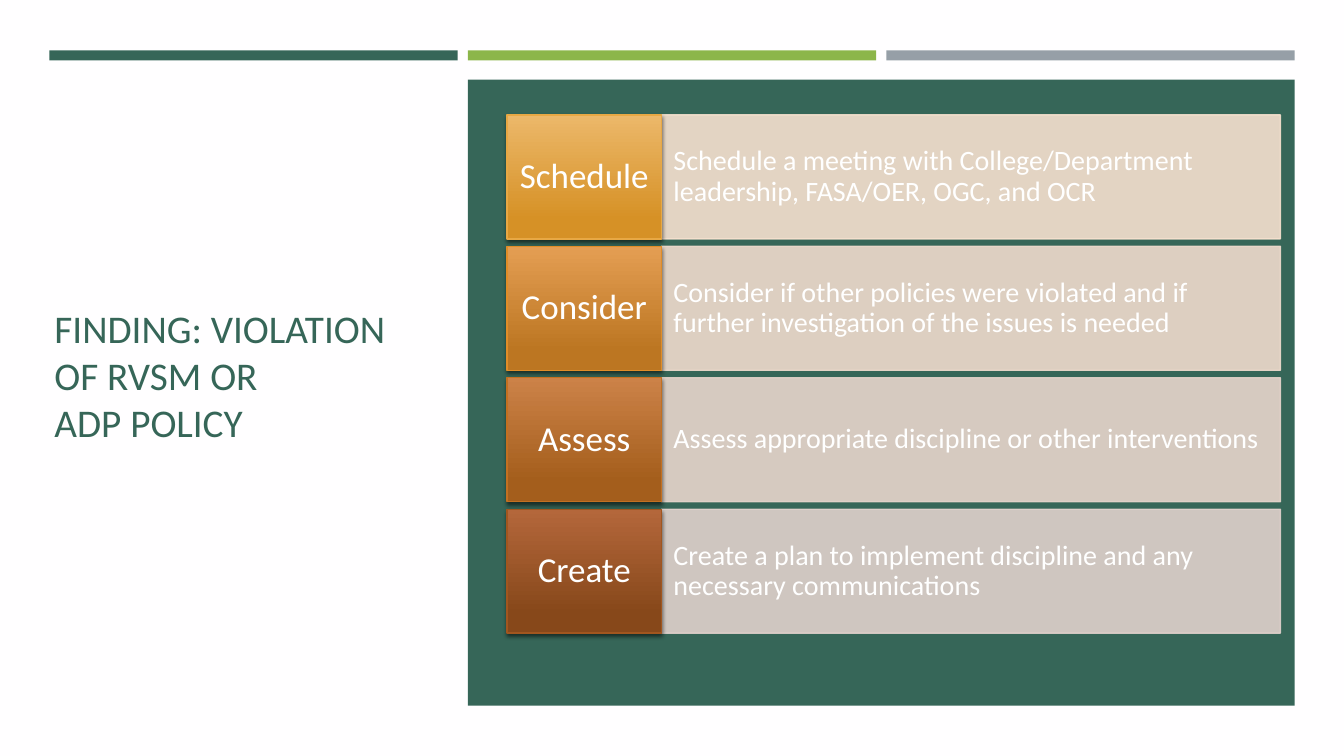
from lxml import etree
from pptx import Presentation
from pptx import util as u
from pptx.dml.color import RGBColor
from pptx.enum import shapes, text
from pptx.oxml import ns

COLORS = {
    "background": "FFFEFF",
    "green": "366658",
    "lime": "8CB64A",
    "gray": "969FA7",
    "white": "FFFFFF",
    "shadow": "000000",
}
BARS = ["green", "lime", "gray"]
STEPS = [
    ("Schedule", "Schedule a meeting with College/Department leadership, FASA/OER, OGC, and OCR",
     ("ECB86A", "D69126", "E8A844"), "F6E1CF"),
    ("Consider", "Consider if other policies were violated and if further investigation of the issues is needed\u00a0",
     ("E49E53", "BC7622", "E08D28"), "F0DBCD"),
    ("Assess", "Assess appropriate discipline or other interventions",
     ("CC8248", "A45E1C", "C37021"), "E8D5CC"),
    ("Create", "Create a plan to implement discipline and any necessary communications\u00a0",
     ("B4673B", "87481A", "A1561F"), "E0D1CC"),
]


def rgb(value):
    return RGBColor.from_string(value)


def add_rectangle(slide, left, top, width, height, fill=None, line=None):
    shape = slide.shapes.add_shape(
        shapes.MSO_SHAPE.RECTANGLE,
        u.Inches(left), u.Inches(top), u.Inches(width), u.Inches(height))
    shape.shadow.inherit = False
    if fill:
        shape.fill.solid()
        shape.fill.fore_color.rgb = rgb(fill)
    if line:
        shape.line.color.rgb = rgb(line)
        shape.line.width = u.Pt(1)
    else:
        shape.line.fill.background()
    return shape


def write_text(shape, content, size, color="white", align=text.PP_ALIGN.LEFT,
               spacing=1.0, inset_x=0.1, inset_y=0.05):
    frame = shape.text_frame
    frame.word_wrap = True
    frame.auto_size = text.MSO_AUTO_SIZE.NONE
    frame.vertical_anchor = text.MSO_ANCHOR.MIDDLE
    frame.margin_left = frame.margin_right = u.Inches(inset_x)
    frame.margin_top = frame.margin_bottom = u.Inches(inset_y)
    paragraph = frame.paragraphs[0]
    paragraph.alignment = align
    paragraph.line_spacing = spacing
    run = paragraph.add_run()
    run.text = content
    run.font.name = "Calibri"
    run.font.size = u.Pt(size)
    run.font.color.rgb = rgb(COLORS[color])


def set_opacity(shape, percent):
    for color in shape._element.spPr.iter(ns.qn("a:srgbClr")):
        etree.SubElement(color, ns.qn("a:alpha"), val=str(percent * 1000))


def set_gradient(shape, start, end):
    shape.fill.gradient()
    shape.fill.gradient_angle = 270
    for stop, color, position in zip(shape.fill.gradient_stops, (start, end), (0, 0.84)):
        stop.color.rgb = rgb(color)
        stop.position = position


def add_shadow(shape):
    effects = shape._element.spPr.find(ns.qn("a:effectLst"))
    shadow = etree.SubElement(
        effects, ns.qn("a:outerShdw"), blurRad=str(u.Pt(3)), dist=str(u.Pt(2)),
        dir="5400000", algn="ctr", rotWithShape="0")
    color = etree.SubElement(shadow, ns.qn("a:srgbClr"), val=COLORS["shadow"])
    etree.SubElement(color, ns.qn("a:alpha"), val="55000")


def add_step(slide, top, label, description, label_colors, panel_color):
    panel = add_rectangle(slide, 6.56, top, 6.14, 1.23, panel_color, panel_color)
    set_opacity(panel, 90)
    write_text(panel, description, 20, spacing=0.9, inset_x=0.12, inset_y=0.31)
    start, end, outline = label_colors
    tile = add_rectangle(slide, 5.03, top, 1.53, 1.23, line=outline)
    set_gradient(tile, start, end)
    add_shadow(tile)
    write_text(tile, label, 25, align=text.PP_ALIGN.CENTER, spacing=0.9,
               inset_x=0.08, inset_y=0.12)


def add_title(slide, content):
    title = slide.shapes.title
    title.left, title.top = u.Inches(0.44), u.Inches(1.14)
    title.width, title.height = u.Inches(3.82), u.Inches(5.15)
    write_text(title, content, 28, color="green")


def main():
    presentation = Presentation()
    presentation.slide_width = u.Inches(13.33)
    presentation.slide_height = u.Inches(7.5)
    slide = presentation.slides.add_slide(presentation.slide_layouts[5])
    slide.background.fill.solid()
    slide.background.fill.fore_color.rgb = rgb(COLORS["background"])

    add_title(slide, "FINDING: VIOLATION OF RVSM OR ADP\u00a0POLICY\u00a0")
    for index, name in enumerate(BARS):
        add_rectangle(slide, 0.49 + 4.15 * index, 0.5, 4.05, 0.1, COLORS[name])
    add_rectangle(slide, 4.64, 0.79, 8.2, 6.21, COLORS["green"])
    for index, step in enumerate(STEPS):
        add_step(slide, 1.14 + 1.304 * index, *step)

    presentation.save("out.pptx")


if __name__ == "__main__":
    main()
